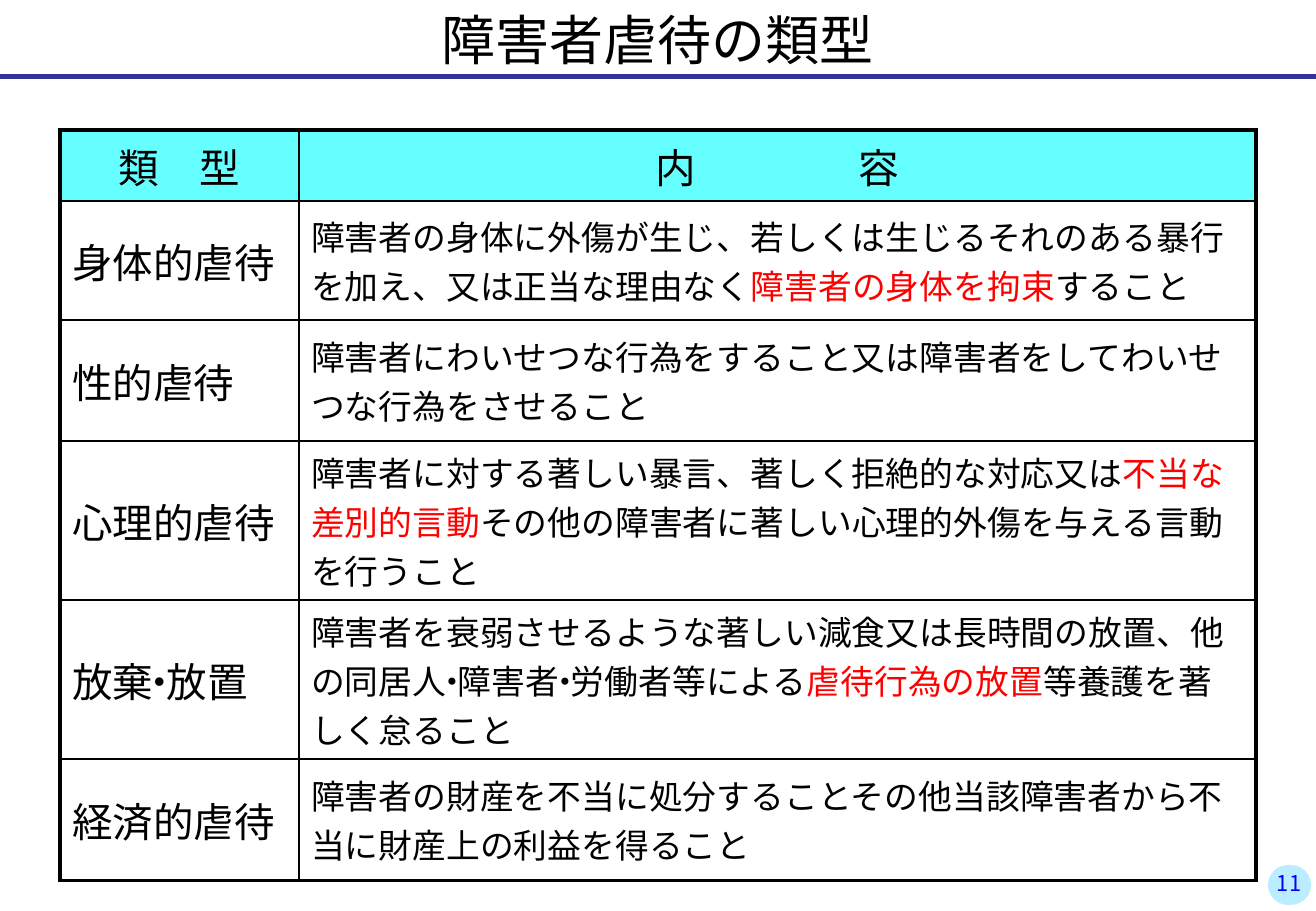
from lxml import etree
from pptx import Presentation
from pptx import util as u
from pptx.dml.color import RGBColor
from pptx.enum import shapes, text
from pptx.oxml import ns

EMU_PER_PX = 7526
COLORS = {
    "black": "000000", "white": "FFFFFF", "red": "FF0000", "blue": "0000FF",
    "rule": "333399", "header": "66FFFF", "badge": "B9EDFF",
}
GOTHIC = "Noto Sans CJK JP"
DOT = "・"
DOT_TRACKING = -0.33  # of the text size, on each side of the dot
HEADER = ["類　型", "内　　　　容"]
# Each description is a list of runs; every second run is emphasised.
ABUSE_TYPES = [
    ("身体的虐待", ["障害者の身体に外傷が生じ、若しくは生じるそれのある暴行を加え、又は正当な理由なく",
                "障害者の身体を拘束", "すること"]),
    ("性的虐待", ["障害者にわいせつな行為をすること又は障害者をしてわいせつな行為をさせること"]),
    ("心理的虐待", ["障害者に対する著しい暴言、著しく拒絶的な対応又は", "不当な差別的言動",
                "その他の障害者に著しい心理的外傷を与える言動を行うこと"]),
    ("放棄・放置", ["障害者を衰弱させるような著しい減食又は長時間の放置、他の同居人・障害者・労働者等による",
                "虐待行為の放置", "等養護を著しく怠ること"]),
    ("経済的虐待", ["障害者の財産を不当に処分することその他当該障害者から不当に財産上の利益を得ること"]),
]
COLUMN_WIDTHS = [239, 957]
ROW_HEIGHTS = [61, 119, 121, 137, 134, 121]


def px(length):
    return u.Emu(length * EMU_PER_PX)


def rgb(name):
    return RGBColor.from_string(COLORS[name])


def split_at_dots(words, tracking, dot_tracking):
    """Yield pieces with their tracking; a dot and its two neighbours are set tight."""
    while DOT in words:
        dot = words.index(DOT)
        yield words[:dot - 1], tracking
        yield words[dot - 1:dot + 2], dot_tracking
        words = words[dot + 2:]
    yield words, tracking


def write(frame, runs, size, font=GOTHIC, color="black", accent="red", align=None,
          line_spacing=None, tracking=0):
    """Fill a text frame with one paragraph, colouring every second run with the accent."""
    paragraph = frame.paragraphs[0]
    paragraph.alignment = align
    paragraph.line_spacing = line_spacing
    for index, words in enumerate(runs):
        for piece, spacing in split_at_dots(words, tracking, DOT_TRACKING * size):
            if not piece:
                continue
            run = paragraph.add_run()
            run.text = piece
            run.font.size = u.Pt(size)
            run.font.name = font
            run.font.color.rgb = rgb(accent if index % 2 else color)
            properties = run.font._element
            properties.set("lang", "ja-JP")
            if spacing:
                properties.set("spc", str(round(spacing * 100)))
            etree.SubElement(properties, ns.qn("a:ea"), typeface=GOTHIC)


def set_borders(cell, widths):
    """Draw black cell borders; widths are points for left, right, top and bottom."""
    properties = cell._tc.get_or_add_tcPr()
    for index, (side, width) in enumerate(zip("LRTB", widths)):
        line = etree.Element(ns.qn(f"a:ln{side}"), w=str(u.Pt(width)))
        fill = etree.SubElement(line, ns.qn("a:solidFill"))
        etree.SubElement(fill, ns.qn("a:srgbClr"), val=COLORS["black"])
        properties.insert(index, line)


class SlideBuilder:
    def __init__(self, presentation):
        self.slide = presentation.slides.add_slide(presentation.slide_layouts[6])
        self.center = text.PP_ALIGN.CENTER

    def title(self, words, left, top, width, height):
        frame = self.slide.shapes.add_textbox(px(left), px(top), px(width), px(height)).text_frame
        frame.word_wrap = True
        frame.vertical_anchor = text.MSO_ANCHOR.MIDDLE
        write(frame, [words], 32, align=self.center)

    def rule(self, left, right, y, width):
        line = self.slide.shapes.add_connector(
            shapes.MSO_CONNECTOR.STRAIGHT, px(left), px(y), px(right), px(y))
        line.line.color.rgb = rgb("rule")
        line.line.width = u.Pt(width)
        etree.SubElement(line._element.spPr, ns.qn("a:effectLst"))

    def page_badge(self, number, left, top, width, height):
        badge = self.slide.shapes.add_shape(
            shapes.MSO_SHAPE.ROUNDED_RECTANGLE, px(left), px(top), px(width), px(height))
        badge.adjustments[0] = 0.5
        badge.shadow.inherit = False
        badge.fill.solid()
        badge.fill.fore_color.rgb = rgb("badge")
        badge.line.fill.background()
        frame = badge.text_frame
        frame.word_wrap = False
        frame.vertical_anchor = text.MSO_ANCHOR.MIDDLE
        frame.margin_left = frame.margin_right = px(5)
        frame.margin_top = frame.margin_bottom = px(5)
        write(frame, [number], 12.9, color="blue", align=self.center,
              line_spacing=0.85, tracking=0.5)

    def abuse_table(self, left, top):
        rows = [(HEADER[0], [HEADER[1]])] + ABUSE_TYPES
        table = self.slide.shapes.add_table(
            len(rows), len(COLUMN_WIDTHS), px(left), px(top),
            px(sum(COLUMN_WIDTHS)), px(sum(ROW_HEIGHTS))).table
        for column, width in zip(table.columns, COLUMN_WIDTHS):
            column.width = px(width)
        for row, height in zip(table.rows, ROW_HEIGHTS):
            row.height = px(height)
        for index, (name, description) in enumerate(rows):
            is_header = index == 0
            for column, runs in enumerate([[name], description]):
                cell = table.cell(index, column)
                cell.fill.solid()
                cell.fill.fore_color.rgb = rgb("header" if is_header else "white")
                cell.vertical_anchor = text.MSO_ANCHOR.MIDDLE
                write(cell.text_frame, runs, 24 if is_header or column == 0 else 20,
                      font="Arial", align=self.center if is_header else None)
                outer_edges = [column == 0, column == 1, is_header, index == len(rows) - 1]
                set_borders(cell, [2.25 if outer else 1 for outer in outer_edges])


def main():
    presentation = Presentation()
    presentation.slide_width, presentation.slide_height = px(1316), px(911)
    builder = SlideBuilder(presentation)
    builder.abuse_table(60, 130)
    builder.rule(-2, 1318, 77, 3)
    builder.title("障害者虐待の類型", 12, 0, 1292, 78)
    builder.page_badge("11", 1268, 865, 43, 40)
    presentation.save("out.pptx")


if __name__ == "__main__":
    main()
